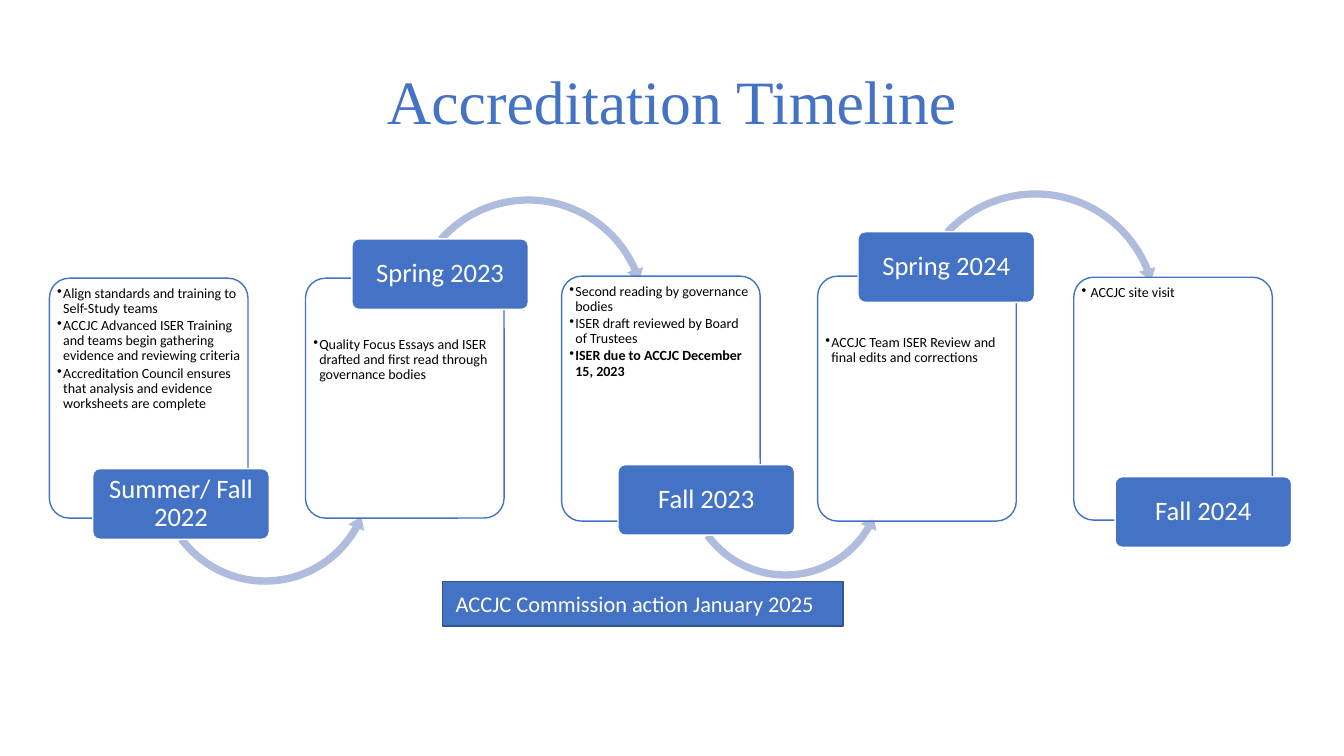
"""Build a one-slide accreditation timeline with five alternating steps."""
from lxml import etree
from pptx import Presentation
from pptx.dml.color import RGBColor
from pptx.enum.shapes import MSO_SHAPE
from pptx.enum.text import MSO_ANCHOR, PP_ALIGN
from pptx.oxml.ns import qn
from pptx.util import Inches, Pt

RECTANGLE = MSO_SHAPE.RECTANGLE
ROUNDED = MSO_SHAPE.ROUNDED_RECTANGLE
ARROW_OVER = MSO_SHAPE.CIRCULAR_ARROW
ARROW_UNDER = MSO_SHAPE.LEFT_CIRCULAR_ARROW
LEFT, CENTER = PP_ALIGN.LEFT, PP_ALIGN.CENTER
TOP, MIDDLE = MSO_ANCHOR.TOP, MSO_ANCHOR.MIDDLE
BLUE, PALE_BLUE, DARK_BLUE = "4472C4", "B0BCDE", "325491"
WHITE, BLACK = "FFFFFF", "000000"

presentation = Presentation()
presentation.slide_width = Inches(13.33)
presentation.slide_height = Inches(7.5)
slide = presentation.slides.add_slide(presentation.slide_layouts[6])


def add_block(kind, box, fill, line=None, adjustments=()):
    shape = slide.shapes.add_shape(kind, *[Inches(length) for length in box])
    shape.shadow.inherit = False
    shape.fill.solid()
    shape.fill.fore_color.rgb = RGBColor.from_string(fill)
    if line:
        shape.line.color.rgb = RGBColor.from_string(line)
        shape.line.width = Pt(1)
    else:
        shape.line.fill.background()
    for index, value in enumerate(adjustments):
        shape.adjustments[index] = value
    return shape


def write(shape, lines, size, color, margins=(0.1, 0.05), font="Calibri",
          align=CENTER, anchor=MIDDLE, spacing=1.0):
    frame = shape.text_frame
    side, top = margins
    frame_format = {
        "word_wrap": True, "vertical_anchor": anchor,
        "margin_left": Inches(side), "margin_right": Inches(side),
        "margin_top": Inches(top), "margin_bottom": Inches(min(top, 0.05)),
    }
    for name, value in frame_format.items():
        setattr(frame, name, value)
    for index, line in enumerate(lines):
        paragraph = frame.paragraphs[0] if index == 0 else frame.add_paragraph()
        paragraph.alignment = align
        paragraph.line_spacing = spacing
        run = paragraph.add_run()
        run.text = line
        for name, value in {"name": font, "size": Pt(size)}.items():
            setattr(run.font, name, value)
        run.font.color.rgb = RGBColor.from_string(color)
    return frame.paragraphs


commission = add_block(RECTANGLE, (4.39, 5.77, 3.97, 0.44), BLUE, DARK_BLUE)
write(commission, ["ACCJC Commission action January 2025"], 16, WHITE,
      margins=(0.13, 0.05), align=LEFT)

steps = [
    {"label": "Summer/ Fall 2022", "label_at": (0.92, 4.65),
     "panel": (2.76, 2.38), "text_top": 0.02,
     "bullets": ["Align standards and training to Self-Study teams",
                 "ACCJC Advanced ISER Training and teams begin gathering "
                 "evidence and reviewing criteria",
                 "Accreditation Council ensures that analysis and evidence "
                 "worksheets are complete"],
     "arrow": (ARROW_UNDER, (1.51, 3.61, 2.24),
               (0.033, 4.009, 17.518, 85.999, 0.038))},
    {"label": "Spring 2023", "label_at": (3.49, 2.37),
     "panel": (2.76, 2.38), "text_top": 0.53,
     "bullets": ["Quality Focus Essays and ISER drafted and first read through "
                 "governance bodies"],
     "arrow": (ARROW_OVER, (4, 1.9, 2.48),
               (0.029, 3.583, 201.788, 132.882, 0.034))},
    {"label": "Fall 2023", "label_at": (6.13, 4.61),
     "panel": (2.74, 2.43), "text_top": 0.02,
     "bullets": ["Second reading by governance bodies",
                 "ISER draft reviewed by Board of Trustees",
                 "ISER due to ACCJC December 15, 2023"],
     "bold_last": True,
     "arrow": (ARROW_UNDER, (6.75, 3.71, 2.08),
               (0.035, 4.346, 18.214, 86.358, 0.041))},
    {"label": "Spring 2024", "label_at": (8.51, 2.3),
     "panel": (2.74, 2.43), "text_top": 0.53,
     "bullets": ["ACCJC Team ISER Review and final edits and corrections"],
     "arrow": (ARROW_OVER, (8.99, 1.84, 2.56),
               (0.028, 3.462, 202.819, 133.792, 0.033))},
    {"label": "Fall 2024", "label_at": (11.06, 4.73),
     "panel": (2.75, 2.41), "text_top": 0.02,
     "bullets": [" ACCJC site visit"]},
]

for number, step in enumerate(steps):
    panel_top, panel_height = step["panel"]
    panel = add_block(ROUNDED, (0.49 + 2.54 * number, panel_top, 1.97, panel_height),
                      WHITE, BLUE, [0.1])
    panel_color = panel.fill._xPr.find(qn("a:solidFill"))[0]
    etree.SubElement(panel_color, qn("a:alpha"), val="90000")
    paragraphs = write(panel, step["bullets"], 10, BLACK, (0.02, step["text_top"]),
                       align=LEFT, anchor=TOP, spacing=0.9)
    for paragraph in paragraphs:
        paragraph.level = 1
        paragraph.space_after = Pt(1.5)
        properties = paragraph._p.get_or_add_pPr()
        properties.set("marL", str(Inches(0.06)))
        properties.set("indent", str(Inches(-0.06)))
        etree.SubElement(properties, qn("a:buChar"), char="•")
    if step.get("bold_last"):
        paragraphs[-1].runs[0].font.bold = True

    if "arrow" in step:
        kind, (left, top, size), adjustments = step["arrow"]
        add_block(kind, (left, top, size, size), PALE_BLUE, adjustments=adjustments)

    label = add_block(ROUNDED, (*step["label_at"], 1.75, 0.7), BLUE, WHITE, [0.1])
    write(label, [step["label"]], 19, WHITE, (0.04, 0.03), spacing=0.9)

title = slide.shapes.add_textbox(Inches(0.49), Inches(0.58), Inches(12.35), Inches(0.84))
write(title, ["Accreditation Timeline"], 44, BLUE, font="Times New Roman", anchor=TOP)

presentation.save("out.pptx")
